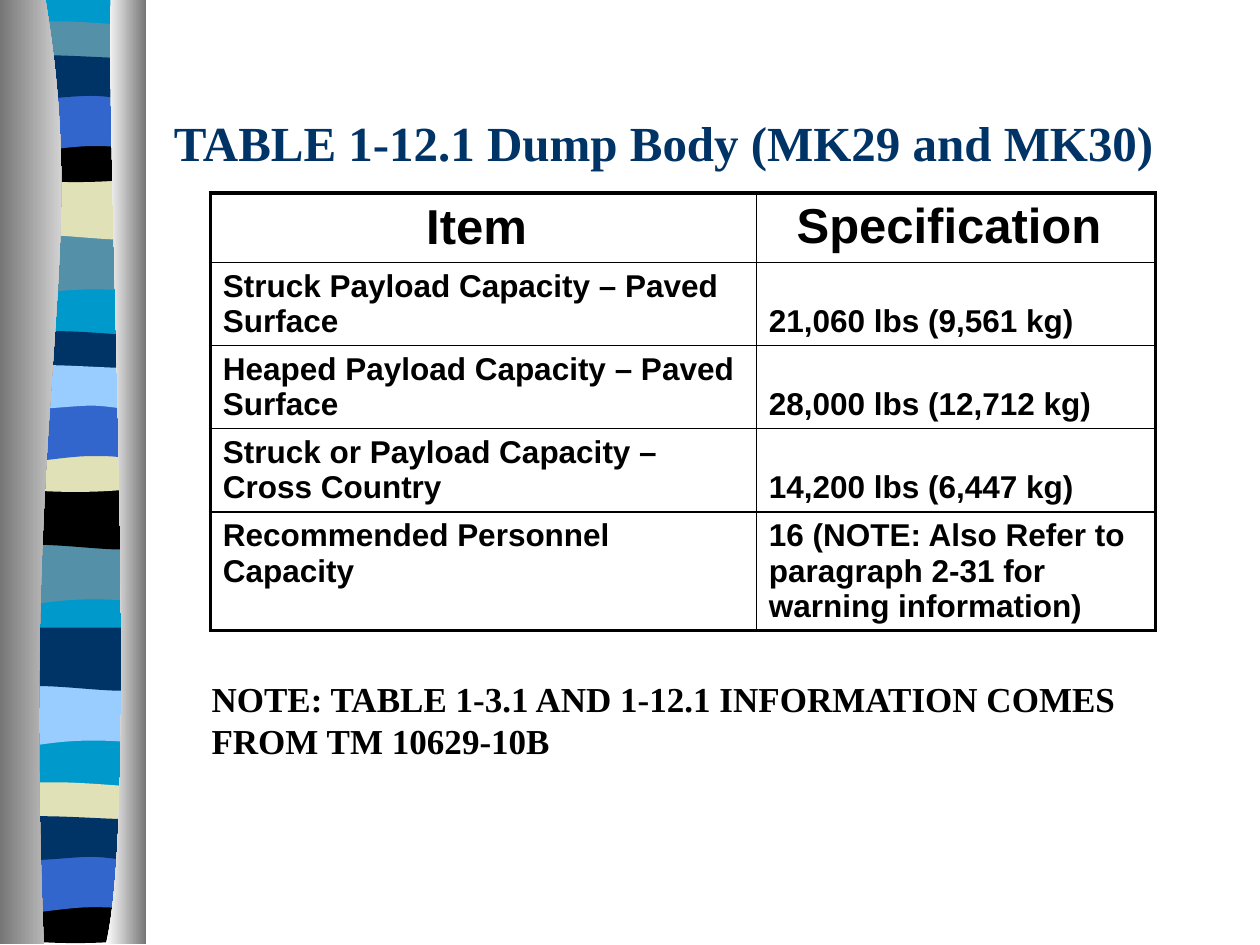
from lxml.etree import SubElement
from pptx import Presentation
from pptx.dml.color import RGBColor
from pptx.enum.text import MSO_ANCHOR, MSO_AUTO_SIZE, PP_ALIGN
from pptx.oxml.ns import qn
from pptx.util import Pt

COLORS = {
    "cyan": "0099CC", "teal": "5490A8", "sand": "E1E1B7", "black": "000000",
    "blue": "3366CC", "navy": "003366", "sky": "99CCFF",
    "dark": "767676", "white": "FFFFFF",
}

deck = Presentation()
deck.slide_width, deck.slide_height = Pt(720), Pt(540)
page = deck.slides.add_slide(deck.slide_layouts[5])


def draw_outline(start, steps, shift=0):
    points = [(Pt(step[i]), Pt(step[i + 1] + shift))
              for step in steps for i in range(0, len(step), 2)]
    builder = page.shapes.build_freeform(Pt(start[0]), Pt(start[1] + shift))
    builder.add_line_segments(points, close=True)
    shape = builder.convert_to_shape()
    shape.shadow.inherit = False
    shape.line.fill.background()
    lines = iter(list(shape._element.iter(qn("a:lnTo"))))
    for step in steps:
        segment = next(lines)
        if len(step) == 6:
            segment.tag = qn("a:cubicBezTo")
            for extra in (next(lines), next(lines)):
                segment.append(extra[0])
                extra.getparent().remove(extra)
    return shape


def write_text(para, text, font, size, color):
    span = para.add_run()
    span.text = text
    for name, value in {"name": font, "size": Pt(size), "bold": True}.items():
        setattr(span.font, name, value)
    span.font.color.rgb = RGBColor.from_string(COLORS[color])


BANDS = {
    "backing": [(82, 0), (82, 538), (4, 538), (4, 0)],
    "ripple": [(82, 133.2), (82, 167), (28, 161.3, 17.3, 172.8, 4, 167), (4, 133.2)],
    "swell": [(82, 100.8), (82, 135.4), (69, 140.4, 28, 131, 4, 135.4), (4, 100.8)],
    "thin": [(82, 15.1), (82, 32.4), (69, 35.3, 17.3, 35.3, 4, 32.4), (4, 15.1),
             (9.4, 11.5, 20.9, 12.2, 33.8, 12.2), (46.8, 12.2, 72, 14.4, 82, 15.1)],
    "bowl": [(82, 77.8), (82, 100.8), (69, 105.1, 17.3, 105.1, 4, 100.8), (4, 77.8),
             (52, 81.4, 65.5, 77.8, 82, 77.8)],
    "arch": [(82, 53.3), (82, 87.8), (70, 83.5, 65, 83.5, 52, 83.5),
             (39, 83.5, 16, 87.8, 4, 87.8), (4, 53.3)],
    "wave": [(82, 33.1), (82, 54.7), (77, 59, 65, 54.7, 52, 54.7),
             (39, 54.7, 12, 59, 4, 54.7), (4, 33.1),
             (15, 29.5, 57, 33.1, 70, 33.1), (83, 33.1, 80, 33.1, 82, 33.1)],
}
GROUPS = [
    (0, {"backing": "cyan", "ripple": "teal", "swell": "sand", "thin": "teal",
         "bowl": "black", "arch": "blue", "wave": "navy"}),
    (177.1, {"ripple": "teal", "swell": "black", "thin": "navy",
             "bowl": "sand", "arch": "blue", "wave": "sky"}),
    (257.8, {"ripple": "sky", "swell": "navy"}),
    (434.9, {"thin": "sand", "bowl": "black", "arch": "blue", "wave": "navy"}),
]
for shift, bands in GROUPS:
    for band, color in bands.items():
        shape = draw_outline(BANDS[band][0], BANDS[band][1:], shift)
        shape.fill.solid()
        shape.fill.fore_color.rgb = RGBColor.from_string(COLORS[color])

CURTAINS = [
    ((26, 0), [(52, 155.5, 12, 213, 25, 539.3), (0, 539.3), (0, 0)], ("dark", "white")),
    ((63.4, 0), [(60.5, 90, 80, 465, 60.5, 539.3), (83.5, 539.3), (83.5, 0)], ("white", "dark")),
]
for start, steps, shades in CURTAINS:
    shape = draw_outline(start, steps)
    shape.fill.gradient()
    shape.fill.gradient_angle = 0
    for stop, shade in zip(shape.fill.gradient_stops, shades):
        stop.color.rgb = RGBColor.from_string(COLORS[shade])

title = page.shapes.title
for name, value in {"left": 92.2, "top": 36, "width": 612, "height": 90}.items():
    setattr(title, name, Pt(value))
title.text_frame.vertical_anchor = MSO_ANCHOR.MIDDLE
title.text_frame.auto_size = MSO_AUTO_SIZE.NONE
title.text_frame.paragraphs[0].alignment = PP_ALIGN.LEFT
write_text(title.text_frame.paragraphs[0], "TABLE 1-12.1 Dump Body (MK29 and MK30)",
           "Times New Roman", 28, "navy")

ROWS = [
    ("Item ", "Specification "),
    ("Struck Payload Capacity – Paved Surface", "21,060 lbs (9,561 kg)"),
    ("Heaped Payload Capacity – Paved Surface", "28,000 lbs (12,712 kg)"),
    ("Struck or Payload Capacity – Cross Country", "14,200 lbs (6,447 kg)"),
    ("Recommended Personnel Capacity",
     "16 (NOTE: Also Refer to paragraph 2-31 for warning information)"),
]
HEIGHTS = [39.7, 47.5, 47.5, 47.5, 67.5]
frame = page.shapes.add_table(len(ROWS), 2, Pt(120.2), Pt(110.2), Pt(540), Pt(sum(HEIGHTS)))
table = frame.table
table.first_row = table.horz_banding = False
for column, width in zip(table.columns, (312, 228)):
    column.width = Pt(width)
for r, texts in enumerate(ROWS):
    table.rows[r].height = Pt(HEIGHTS[r])
    for c, text in enumerate(texts):
        cell = table.cell(r, c)
        para = cell.text_frame.paragraphs[0]
        para.alignment = PP_ALIGN.CENTER if r == 0 else PP_ALIGN.LEFT
        size = 28 if r == 0 else 18
        write_text(para, text, "Arial", size, "black")
        spacing = SubElement(para._p.get_or_add_pPr(), qn("a:spcBef"))
        SubElement(spacing, qn("a:spcPct"), val="20000")
        if (r, c) == (0, 0):
            cell.vertical_anchor = MSO_ANCHOR.MIDDLE
        elif r and c:
            cell.vertical_anchor = MSO_ANCHOR.BOTTOM
        else:
            cell.vertical_anchor = MSO_ANCHOR.TOP
        outer = {"lnL": c == 0, "lnR": c == 1, "lnT": r == 0, "lnB": r == len(ROWS) - 1}
        properties = cell._tc.get_or_add_tcPr()
        for side, thick in outer.items():
            border = SubElement(properties, qn(f"a:{side}"), w=str(Pt(2.25 if thick else 1)))
            SubElement(SubElement(border, qn("a:solidFill")), qn("a:srgbClr"), val=COLORS["black"])
        cell.fill.background()

note = page.shapes.add_textbox(Pt(113.8), Pt(383.8), Pt(540), Pt(79.2))
note.text_frame.word_wrap = True
write_text(note.text_frame.paragraphs[0],
           "NOTE: TABLE 1-3.1 AND 1-12.1 INFORMATION COMES FROM TM 10629-10B",
           "Times New Roman", 20, "black")

deck.save("out.pptx")
